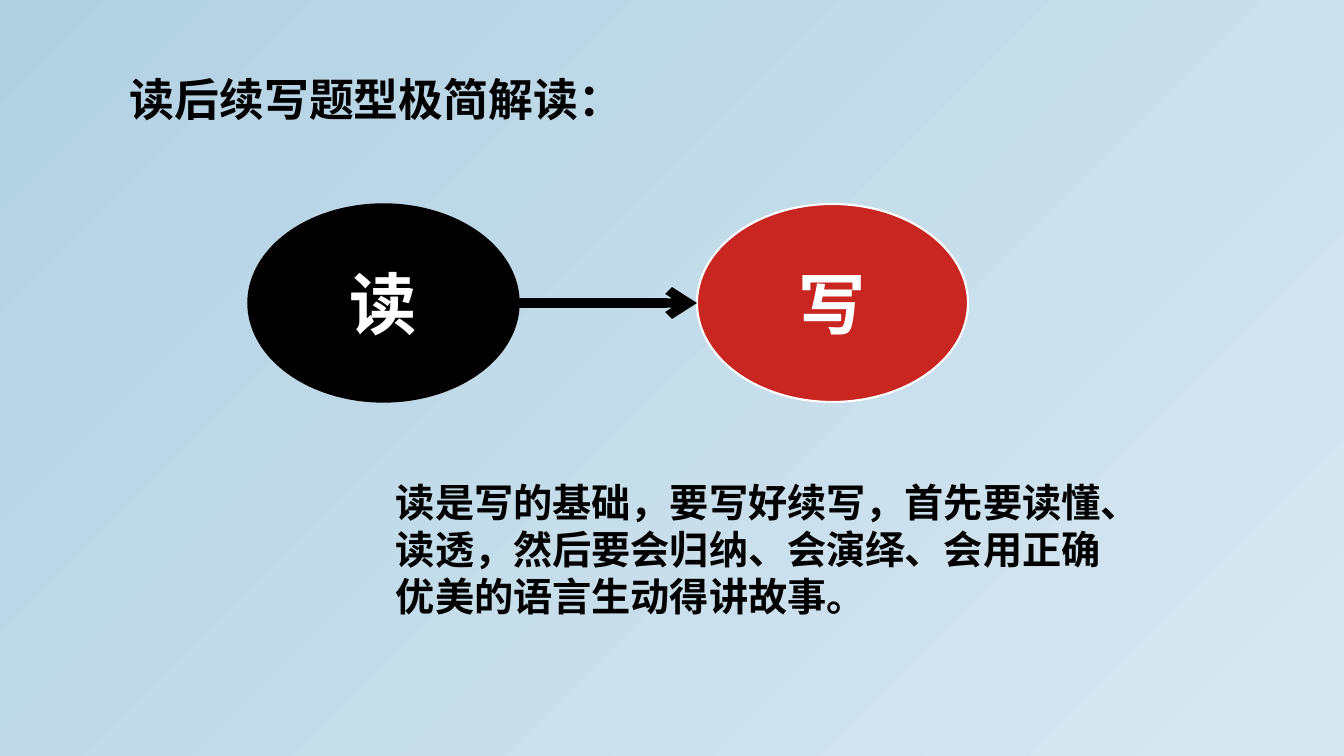
from lxml import etree
from pptx import Presentation, util as u
from pptx.dml.color import RGBColor
from pptx.enum import shapes, text
from pptx.oxml.ns import qn

PX = 12192000 / 1344
FONT = "TeX Gyre Bonum"
BLACK, WHITE, RED = "000000", "FFFFFF", "C92521"


def color(value):
    return RGBColor.from_string(value)


def write(shape, wording, size, fill):
    shape.text_frame.word_wrap = True
    para = shape.text_frame.paragraphs[0]
    span = para.add_run()
    span.text = wording
    span.font.name = FONT
    span.font.size = u.Pt(size)
    span.font.bold = True
    span.font.color.rgb = color(fill)
    # Chinese characters take their font from the East Asian slot
    etree.SubElement(span.font._element, qn("a:ea"), typeface=FONT)
    return para


deck = Presentation()
deck.slide_width, deck.slide_height = u.Emu(12192000), u.Emu(6858000)
page = deck.slides.add_slide(deck.slide_layouts[6])

# Background gradient, from top left to bottom right
backdrop = page.background.fill
backdrop.gradient()
backdrop.gradient_angle = 315
for stop, (position, shade) in zip(backdrop.gradient_stops, [(0, "B1D1E3"), (1, "D8E8F1")]):
    stop.position = position
    stop.color.rgb = color(shade)

# Heading and explanation
for place, wording, size in [
    ((120, 67, 614, 65), "读后续写题型极简解读：", 32),
    ((386, 473, 747, 152), "读是写的基础，要写好续写，首先要读懂、读透，然后要会归纳、会演绎、会用正确优美的语言生动得讲故事。", 28),
]:
    box = page.shapes.add_textbox(*[u.Emu(round(n * PX)) for n in place])
    write(box, wording, size, BLACK)

# Reading and writing ovals
ovals = []
for left, wording, fill, outline, weight in [
    (248, "读", BLACK, BLACK, 1),
    (697, "写", RED, WHITE, 1.5),
]:
    place = [u.Emu(round(n * PX)) for n in (left, 204, 271, 198)]
    oval = page.shapes.add_shape(shapes.MSO_SHAPE.OVAL, *place)
    oval.shadow.inherit = False
    oval.fill.solid()
    oval.fill.fore_color.rgb = color(fill)
    oval.line.color.rgb = color(outline)
    oval.line.width = u.Pt(weight)
    oval.text_frame.vertical_anchor = text.MSO_ANCHOR.MIDDLE
    write(oval, wording, 48, WHITE).alignment = text.PP_ALIGN.CENTER
    ovals.append(oval)

# Arrow from reading to writing
reading, writing = ovals
middle = reading.top + reading.height // 2
arrow = page.shapes.add_connector(
    shapes.MSO_CONNECTOR.STRAIGHT, reading.left + reading.width, middle, writing.left, middle)
arrow.line.color.rgb = color(BLACK)
arrow.line.width = u.Pt(6.5)
etree.SubElement(arrow.line._get_or_add_ln(), qn("a:tailEnd"), type="arrow")
etree.SubElement(arrow._element.spPr, qn("a:effectLst"))

deck.save("out.pptx")
